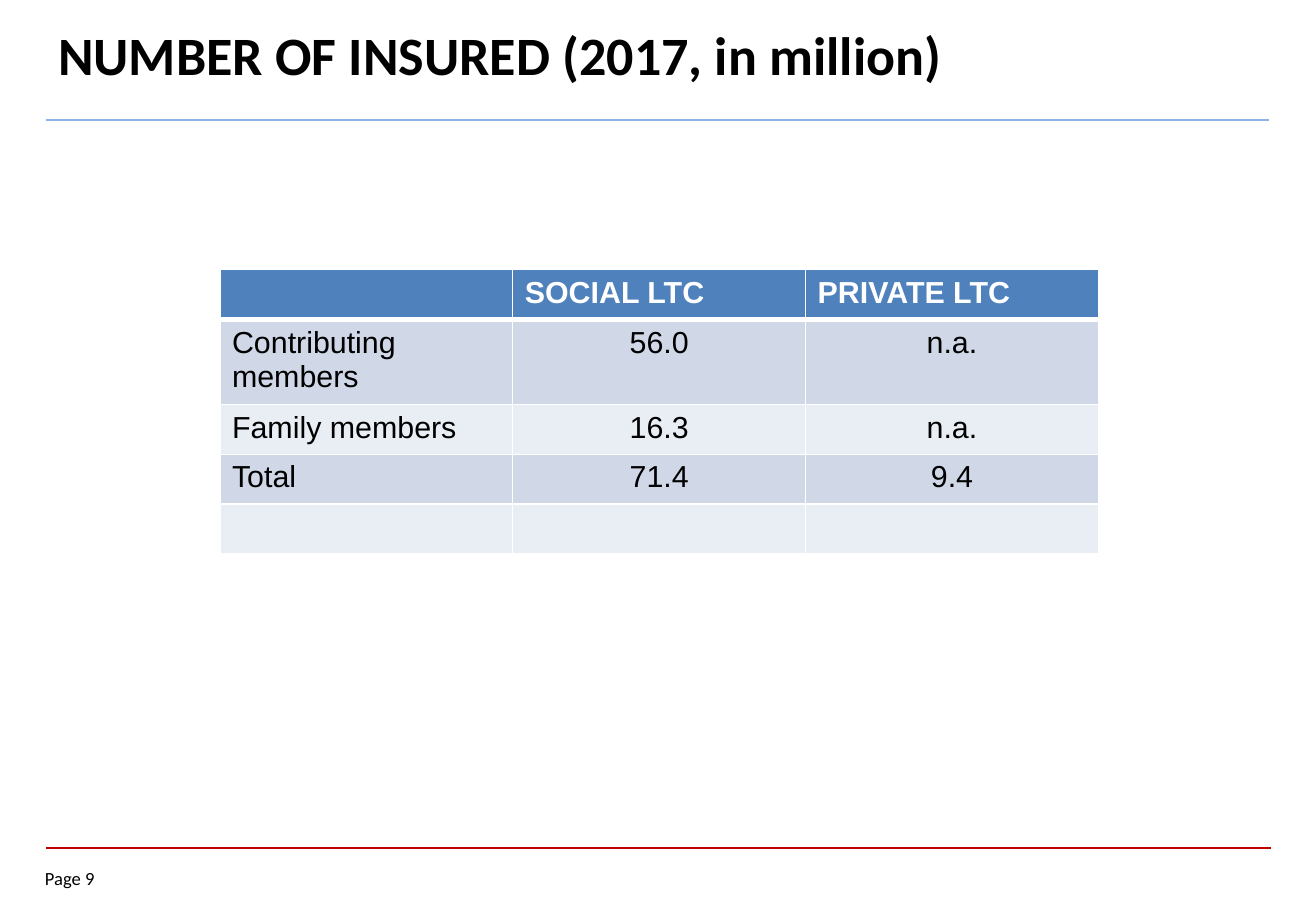
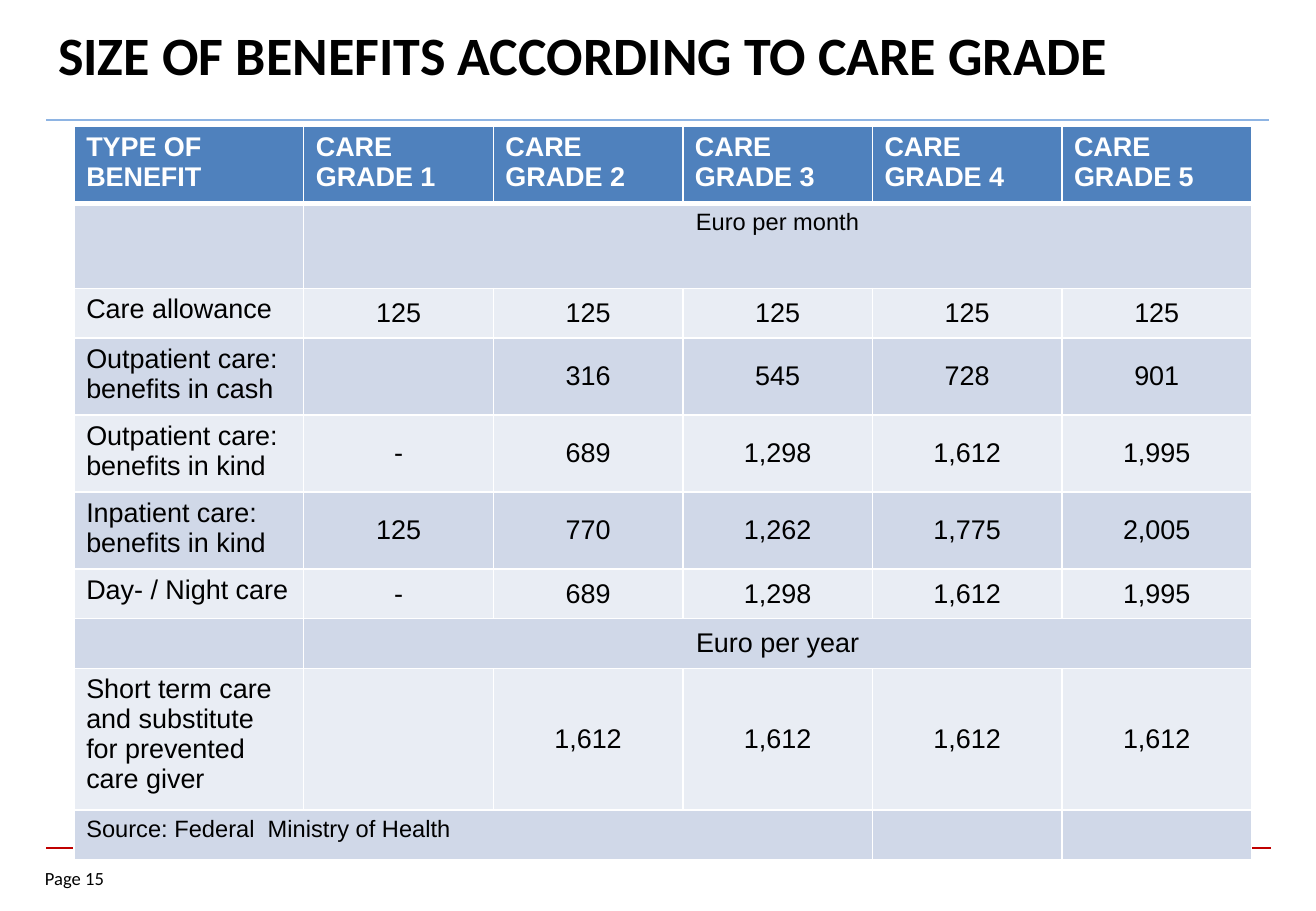
from dataclasses import dataclass

from lxml.etree import SubElement
from pptx import Presentation
from pptx.dml.color import RGBColor
from pptx.enum.shapes import MSO_CONNECTOR as Connector
from pptx.enum.text import MSO_ANCHOR as Anchor, PP_ALIGN as Align
from pptx.oxml.ns import qn
from pptx.util import Inches, Pt


@dataclass(frozen=True)
class Theme:
    # Colours
    black: str = "000000"
    white: str = "FFFFFF"
    title_rule: str = "8EB4E3"
    footer_rule: str = "C00000"
    header: str = "4F81BD"
    bands: tuple = ("D0D8E8", "E9EDF4")
    # Fonts and type sizes
    heading_font: str = "Calibri"
    table_font: str = "Arial"
    title_size: int = 32
    footer_size: int = 11
    large_size: int = 18
    body_size: int = 16
    small_size: int = 14


class DeckBuilder:
    def __init__(self, theme):
        self.theme = theme
        self.deck = Presentation()
        self.deck.slide_width = Inches(10.83)
        self.deck.slide_height = Inches(7.5)
        self.page = None

    def new_page(self, title, number):
        """Add a slide with its title, rules and page number."""
        theme = self.theme
        self.page = self.deck.slides.add_slide(self.deck.slide_layouts[6])
        self.rule(6.98, 10.46, theme.footer_rule, 1)
        self.rule(0.99, 10.44, theme.title_rule, 1.5)
        footer = self.text(f"Page {number}", (0.37, 7.14, 0.73, 0.22), theme.footer_size)
        footer.margin_left = footer.margin_right = 0
        footer.margin_top = footer.margin_bottom = 0
        heading = self.text(title, (0.38, 0.09, 9.92, 0.71), theme.title_size, bold=True)
        heading.vertical_anchor = Anchor.MIDDLE

    def rule(self, top, right, color, width):
        line = self.page.shapes.add_connector(
            Connector.STRAIGHT, Inches(0.38), Inches(top), Inches(right), Inches(top))
        line.line.color.rgb = RGBColor.from_string(color)
        line.line.width = Pt(width)
        SubElement(line._element.spPr, qn("a:effectLst"))

    def text(self, words, place, size, bold=False):
        box = self.page.shapes.add_textbox(*map(Inches, place))
        frame = box.text_frame
        frame.word_wrap = True
        self.fill_para(frame.paragraphs[0], words, self.theme.heading_font, size,
                       self.theme.black, bold)
        return frame

    def fill_para(self, para, words, font, size, color, bold=False):
        for index, line in enumerate(words.splitlines()):
            if index:
                para.add_line_break()
            para.add_run().text = line
        para.font.name = font
        para.font.size = Pt(size)
        para.font.bold = bold
        para.font.color.rgb = RGBColor.from_string(color)

    def borders(self, cell, top, bottom):
        """Draw the white cell edges; widths are in points."""
        properties = cell._tc.get_or_add_tcPr()
        for side, width in (("L", 1), ("R", 1), ("T", top), ("B", bottom)):
            edge = SubElement(properties, qn(f"a:ln{side}"), w=str(Pt(width)))
            fill = SubElement(edge, qn("a:solidFill"))
            SubElement(fill, qn("a:srgbClr"), val=self.theme.white)

    def table(self, rows, left, top, widths, heights, size,
              anchor=Anchor.TOP, spans=(), small_rows=()):
        """Spans are (row, first column, last column)."""
        theme = self.theme
        table = self.page.shapes.add_table(
            len(rows), len(widths), Inches(left), Inches(top),
            Inches(sum(widths)), Inches(sum(heights))).table
        for column, width in zip(table.columns, widths):
            column.width = Inches(width)
        for row, height in zip(table.rows, heights):
            row.height = Inches(height)

        for r, values in enumerate(rows):
            is_header = r == 0
            fill = theme.header if is_header else theme.bands[(r - 1) % 2]
            color = theme.white if is_header else theme.black
            is_small = r in small_rows
            for c, words in enumerate(values):
                cell = table.cell(r, c)
                self.borders(cell, 3 if r == 1 else 1, 3 if is_header else 1)
                cell.fill.solid()
                cell.fill.fore_color.rgb = RGBColor.from_string(fill)
                para = cell.text_frame.paragraphs[0]
                self.fill_para(para, words, theme.table_font,
                               theme.small_size if is_small else size, color, is_header)
                if c and not is_header:
                    para.alignment = Align.CENTER
                    cell.vertical_anchor = Anchor.TOP if is_small else anchor

        for r, first, last in spans:
            table.cell(r, first).merge(table.cell(r, last))


def main():
    theme = Theme()
    builder = DeckBuilder(theme)

    # Number of insured
    builder.new_page("NUMBER OF INSURED (2017, in million)", 9)
    insured = [
        ("", "SOCIAL LTC", "PRIVATE LTC"),
        ("Contributing members", "56.0", "n.a."),
        ("Family members", "16.3", "n.a."),
        ("Total", "71.4", "9.4"),
        ("", "", ""),
    ]
    builder.table(insured, 1.81, 2.22, [2.41] * 3, [0.41] * 5, theme.large_size)

    # Benefits by care grade
    builder.new_page("SIZE OF BENEFITS ACCORDING TO CARE GRADE", 15)
    benefits = [
        ("TYPE OF BENEFIT", *(f"CARE GRADE {grade}" for grade in range(1, 6))),
        ("", "Euro per month", "", "", "", ""),
        ("Care allowance", *["125"] * 5),
        ("Outpatient care:\nbenefits in cash", "", "316", "545", "728", "901"),
        ("Outpatient care:\nbenefits in kind", "-", "689", "1,298", "1,612", "1,995"),
        ("Inpatient care:\nbenefits in kind", "125", "770", "1,262", "1,775", "2,005"),
        ("Day- / Night care", "-", "689", "1,298", "1,612", "1,995"),
        ("", "Euro per year", "", "", "", ""),
        ("Short term care and substitute for prevented care giver", "", *["1,612"] * 4),
        ("Source: Federal  Ministry of Health", "", "", "", "", ""),
    ]
    builder.table(benefits, 0.61, 1.04, [1.89] + [1.56] * 5,
                  [0.41, 0.7] + [0.41] * 8, theme.body_size, Anchor.MIDDLE,
                  spans=[(1, 1, 5), (7, 1, 5), (9, 0, 3)], small_rows=(1, 9))

    builder.deck.save("out.pptx")


if __name__ == "__main__":
    main()
